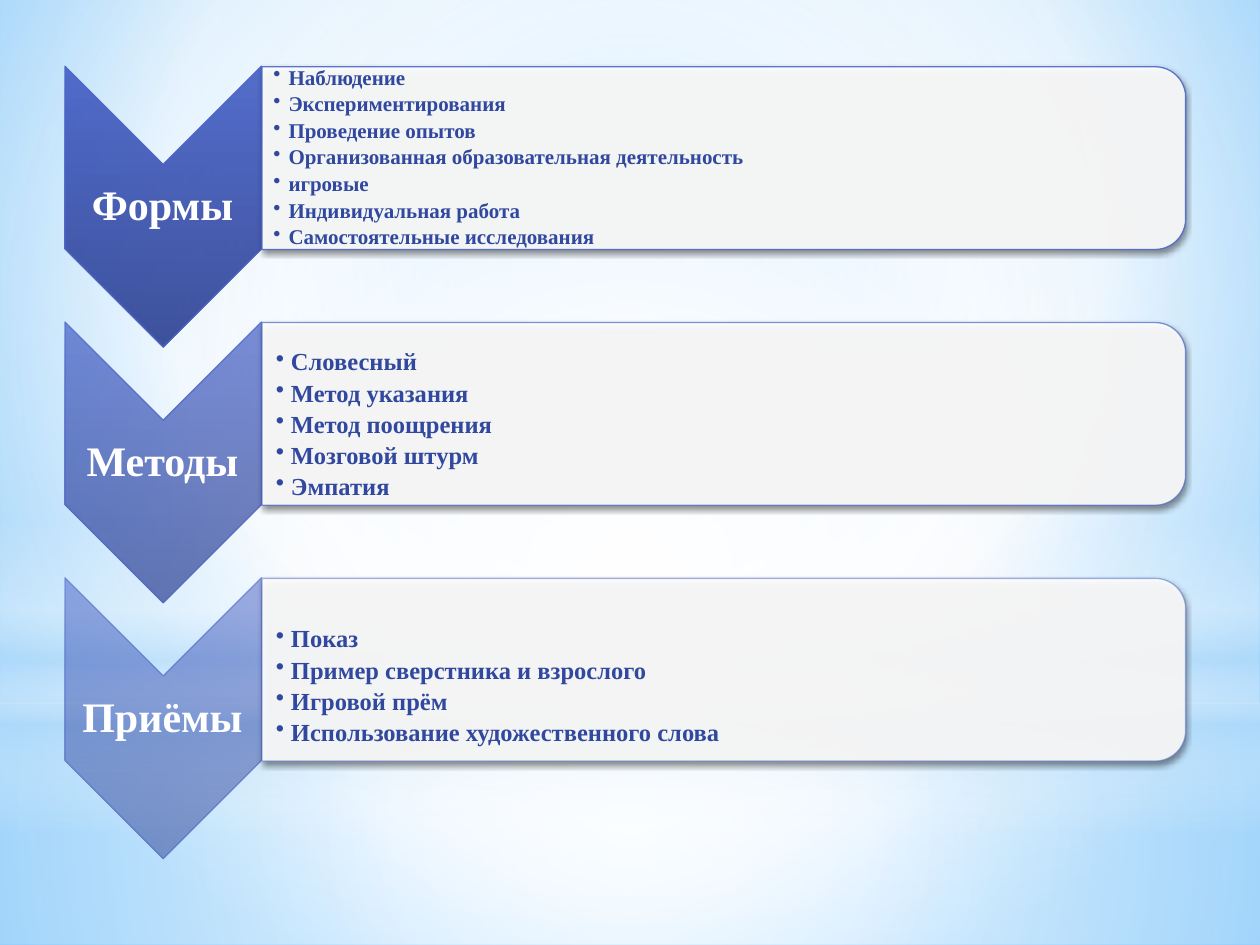
from lxml import etree
from pptx import Presentation
from pptx.dml.color import RGBColor
from pptx.enum.shapes import MSO_SHAPE
from pptx.enum.text import MSO_ANCHOR, PP_ALIGN
from pptx.oxml.ns import qn
from pptx.util import Inches, Pt

RECT, OVAL = MSO_SHAPE.RECTANGLE, MSO_SHAPE.OVAL
CHEVRON, PANEL = MSO_SHAPE.CHEVRON, MSO_SHAPE.ROUND_2_SAME_RECTANGLE
MIDDLE = MSO_ANCHOR.MIDDLE
LEFT, CENTER = PP_ALIGN.LEFT, PP_ALIGN.CENTER

FONT = "Times New Roman"
WHITE, PALE, ACCENT, TEXT = "FFFFFF", "B4DCFA", "4E67C8", "31489F"
CENTRED = (50, 50, 50, 50)
TOP, PITCH = 0.53, 2.03

SECTIONS = [
    ("Формы", 90, 12, 0.09, 0.01, [
        "Наблюдение", "Экспериментирования", "Проведение опытов",
        "Организованная образовательная деятельность", "игровые",
        "Индивидуальная работа", "Самостоятельные исследования"]),
    ("Методы", 70, 14, 0.11, 0.19, [
        "Словесный", "Метод указания", "Метод поощрения",
        "Мозговой штурм", "Эмпатия"]),
    ("Приёмы", 50, 14, 0.11, 0.28, [
        "Показ", "Пример сверстника и взрослого", "Игровой прём",
        "Использование художественного слова"]),
]


def rgb(value):
    return RGBColor.from_string(value)


def add_node(parent, tag, **attrs):
    return etree.SubElement(parent, qn(tag), {k: str(v) for k, v in attrs.items()})


def add_color(parent, color, alpha):
    clr = add_node(parent, "a:srgbClr", val=color)
    add_node(clr, "a:alpha", val=alpha * 1000)


def set_gradient(fill, props, stops, focus=None, angle=0):
    fill.background()
    empty = props.find(qn("a:noFill"))
    grad = etree.Element(qn("a:gradFill"), rotWithShape="1")
    stop_list = add_node(grad, "a:gsLst")
    for pos, color, alpha in stops:
        add_color(add_node(stop_list, "a:gs", pos=pos * 1000), color, alpha)
    if focus:
        route = add_node(grad, "a:path", path="circle")
        sides = dict(zip("ltrb", (side * 1000 for side in focus)))
        add_node(route, "a:fillToRect", **sides)
    else:
        add_node(grad, "a:lin", ang=angle * 60000, scaled=0)
    props.replace(empty, grad)


def add_shape(slide, kind, x, y, w, h, rotation=0):
    s = slide.shapes.add_shape(kind, Inches(x), Inches(y), Inches(w), Inches(h))
    s.rotation = rotation
    s.shadow.inherit = False
    s.line.fill.background()
    return s


def set_outline(s, alpha):
    s.line.color.rgb = rgb(ACCENT)
    s.line.width = Pt(0.75)
    clr = s.line._ln.find(".//" + qn("a:srgbClr"))
    add_node(clr, "a:alpha", val=alpha * 1000)


def add_text(slide, lines, x, y, w, h, size=12, color=TEXT, align=LEFT,
             insets=(0.02, 0.02, 0.02, 0.02), after=0, bullet=False):
    tf = slide.shapes.add_textbox(Inches(x), Inches(y), Inches(w), Inches(h)).text_frame
    tf.word_wrap = True
    tf.vertical_anchor = MIDDLE
    tf.margin_left, tf.margin_top, tf.margin_right, tf.margin_bottom = map(Inches, insets)
    for i, line in enumerate(lines):
        p = tf.add_paragraph() if i else tf.paragraphs[0]
        p.alignment = align
        p.line_spacing = 0.9
        p.space_after = Pt(after)
        if bullet:
            props = p._p.get_or_add_pPr()
            props.set("marL", str(Inches(0.12)))
            props.set("indent", str(-Inches(0.12)))
            add_node(props, "a:buChar", char="•")
        r = p.add_run()
        r.text = line
        r.font.name = FONT
        r.font.size = Pt(size)
        r.font.bold = True
        r.font.color.rgb = rgb(color)


def add_background(slide):
    fill = slide.background.fill
    props = slide.element.find(".//" + qn("p:bgPr"))
    set_gradient(fill, props, [(0, "9ED5FF", 100), (60, WHITE, 100), (100, "5BB9FF", 100)],
                 (20, 10, 20, 60))
    layers = [
        (RECT, 5.58, 1.92, [(0, WHITE, 91), (37, WHITE, 76), (100, PALE, 79)], CENTRED),
        (RECT, 0, 5.58, [(0, WHITE, 89), (48, WHITE, 62), (100, PALE, 79)], CENTRED),
        (RECT, 4.12, 2.5, [(0, WHITE, 0), (29, WHITE, 30), (45, PALE, 40),
                           (55, WHITE, 26), (65, PALE, 60), (100, WHITE, 0)], None),
        (OVAL, 1.75, 5.58, [(0, WHITE, 100), (56, WHITE, 0)], CENTRED),
    ]
    for kind, y, h, stops, focus in layers:
        s = add_shape(slide, kind, 0, y, 10, h)
        set_gradient(s.fill, s._element.spPr, stops, focus, 90)


def add_chevron(slide, y, title, alpha):
    s = add_shape(slide, CHEVRON, 0.18, y + 0.33, 2.23, 1.56, 90)
    set_gradient(s.fill, s._element.spPr, [(0, "435EC5", alpha), (100, "2B4092", alpha)])
    set_outline(s, alpha)
    add_text(slide, [title], 0.51, y + 0.78, 1.56, 0.67, size=24, color=WHITE, align=CENTER)


def add_panel(slide, y, items, alpha, size, left, top):
    s = add_shape(slide, PANEL, 5.02, y - 2.94, 1.45, 7.33, 90)
    s.fill.solid()
    s.fill.fore_color.rgb = rgb(WHITE)
    props = s._element.spPr
    add_node(props.find(qn("a:solidFill"))[0], "a:alpha", val=90000)
    set_outline(s, alpha)
    shadow = add_node(props.find(qn("a:effectLst")), "a:outerShdw", blurRad=Pt(3.1),
                      dist=Pt(1.8), dir=5400000, rotWithShape=0)
    add_color(shadow, "000000", 45)
    add_text(slide, items, 2.08, y + 0.07, 7.26, 1.31, size=size,
             insets=(left, top, 0.01, 0.01), after=size * 0.19, bullet=True)


def main():
    prs = Presentation()
    prs.slide_width, prs.slide_height = Inches(10), Inches(7.5)
    slide = prs.slides.add_slide(prs.slide_layouts[6])
    add_background(slide)
    for i, (title, alpha, size, left, top, items) in enumerate(SECTIONS):
        y = TOP + i * PITCH
        add_chevron(slide, y, title, alpha)
        add_panel(slide, y, items, alpha, size, left, top)
    prs.save("out.pptx")


if __name__ == "__main__":
    main()
